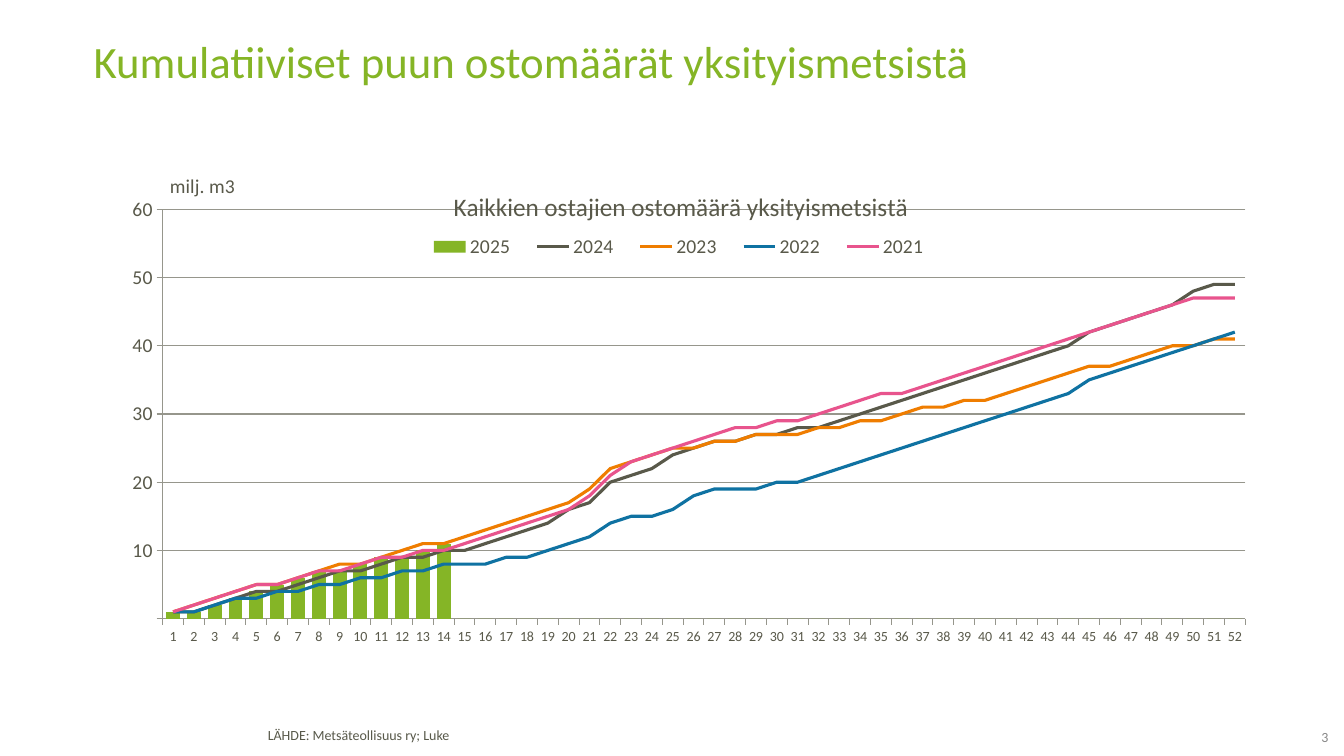
from lxml import etree
from pptx import Presentation
from pptx.chart.data import CategoryChartData
from pptx.dml.color import RGBColor
from pptx.enum.chart import (XL_CHART_TYPE, XL_LEGEND_POSITION,
                             XL_MARKER_STYLE, XL_TICK_MARK)
from pptx.enum.text import MSO_ANCHOR, PP_ALIGN
from pptx.oxml.ns import qn
from pptx.util import Cm, Pt

COLUMNS = XL_CHART_TYPE.COLUMN_CLUSTERED
LEGEND_RIGHT = XL_LEGEND_POSITION.RIGHT
NO_MARKER = XL_MARKER_STYLE.NONE
TICK_OUT = XL_TICK_MARK.OUTSIDE
TICK_NONE = XL_TICK_MARK.NONE
TOP, MIDDLE = MSO_ANCHOR.TOP, MSO_ANCHOR.MIDDLE
LEFT, RIGHT = PP_ALIGN.LEFT, PP_ALIGN.RIGHT

FONT = "Calibri"
MILLION = 1000000
WEEKS = 52
COLORS = {
    "green": "85B526", "text": "59594A", "source": "58594A",
    "number": "878787", "grid": "96968C",
    "2025": "85B526", "2024": "59594A", "2023": "EF7D00",
    "2022": "0F72A2", "2021": "E8548D",
}
PURCHASES = {
    "2025": [1, 1, 2, 3, 4, 5, 6, 7, 7, 8, 9, 9, 10, 11],
    "2024": [1, 1, 2, 3, 4, 4, 5, 6, 7, 7, 8, 9, 9, 10, 10, 11, 12, 13,
             14, 16, 17, 20, 21, 22, 24, 25, 26, 26, 27, 27, 28, 28, 29, 30, 31,
             32, 33, 34, 35, 36, 37, 38, 39, 40, 42, 43, 44, 45, 46, 48, 49, 49],
    "2023": [1, 2, 3, 4, 5, 5, 6, 7, 8, 8, 9, 10, 11, 11, 12, 13, 14, 15,
             16, 17, 19, 22, 23, 24, 25, 25, 26, 26, 27, 27, 27, 28, 28, 29, 29,
             30, 31, 31, 32, 32, 33, 34, 35, 36, 37, 37, 38, 39, 40, 40, 41, 41],
    "2022": [1, 1, 2, 3, 3, 4, 4, 5, 5, 6, 6, 7, 7, 8, 8, 8, 9, 9,
             10, 11, 12, 14, 15, 15, 16, 18, 19, 19, 19, 20, 20, 21, 22, 23, 24,
             25, 26, 27, 28, 29, 30, 31, 32, 33, 35, 36, 37, 38, 39, 40, 41, 42],
    "2021": [1, 2, 3, 4, 5, 5, 6, 7, 7, 8, 9, 9, 10, 10, 11, 12, 13, 14,
             15, 16, 18, 21, 23, 24, 25, 26, 27, 28, 28, 29, 29, 30, 31, 32, 33,
             33, 34, 35, 36, 37, 38, 39, 40, 41, 42, 43, 44, 45, 46, 47, 47, 47],
}


def rgb(name):
    """Return the named colour."""
    return RGBColor.from_string(COLORS[name])


def set_font(font, size, color):
    """Format a font."""
    font.name = FONT
    font.size = Pt(size)
    font.bold = False
    font.color.rgb = rgb(color)


def add_text(page, text, place, *, size, color, align=LEFT, anchor=TOP,
             spacing=1.0, insets=(0.25, 0.13, 0.25, 0.13)):
    """Add a text box with one formatted paragraph."""
    box = page.shapes.add_textbox(*(Cm(length) for length in place))
    frame = box.text_frame
    frame.word_wrap = True
    frame.vertical_anchor = anchor
    (frame.margin_left, frame.margin_top,
     frame.margin_right, frame.margin_bottom) = (Cm(inset) for inset in insets)
    para = frame.paragraphs[0]
    para.alignment = align
    para.line_spacing = spacing
    span = para.add_run()
    span.text = text
    set_font(span.font, size, color)


def add_child(parent, tag, value=None):
    """Append a chart element with an optional value."""
    child = etree.SubElement(parent, qn(tag))
    if value is not None:
        child.set("val", str(value))
    return child


def set_layout(element, index, x, y, width=None, height=None, inner=False):
    """Place a chart part at fractions of the chart area."""
    for previous in element.findall(qn("c:layout")):
        element.remove(previous)
    layout = etree.Element(qn("c:layout"))
    element.insert(index, layout)
    manual = add_child(layout, "c:manualLayout")
    if inner:
        add_child(manual, "c:layoutTarget", "inner")
    add_child(manual, "c:xMode", "edge")
    add_child(manual, "c:yMode", "edge")
    for tag, value in (("x", x), ("y", y), ("w", width), ("h", height)):
        if value is not None:
            add_child(manual, f"c:{tag}", value)


def set_title(title, text, size, x, y):
    """Write and place a horizontal title of the chart or an axis."""
    frame = title.text_frame
    frame.text = text
    set_font(frame.paragraphs[0].runs[0].font, size, "text")
    element = title._element
    body = element.find(".//" + qn("a:bodyPr"))
    body.set("rot", "0")
    body.set("vert", "horz")
    set_layout(element, 1, x, y)


def move_to_lines(chart):
    """Turn every series after the first into a line."""
    bars = chart._chartSpace.find(".//" + qn("c:barChart"))
    lines = etree.Element(qn("c:lineChart"))
    bars.addnext(lines)
    add_child(lines, "c:grouping", "standard")
    add_child(lines, "c:varyColors", 0)
    for series in bars.findall(qn("c:ser"))[1:]:
        for invert in series.findall(qn("c:invertIfNegative")):
            series.remove(invert)
        lines.append(series)
    add_child(lines, "c:marker", 1)
    for axis in bars.findall(qn("c:axId")):
        add_child(lines, "c:axId", axis.get("val"))


def format_series(chart):
    """Colour the columns and the lines."""
    columns, lines = chart.plots
    columns.gap_width = 50
    columns.vary_by_categories = False
    for series in columns.series:
        series.format.fill.solid()
        series.format.fill.fore_color.rgb = rgb(series.name)
    for series in lines.series:
        series.smooth = False
        series.marker.style = NO_MARKER
        series.format.line.width = Pt(2.25)
        series.format.line.color.rgb = rgb(series.name)


def format_axes(chart):
    """Format the week axis and the volume axis."""
    weeks, volume = chart.category_axis, chart.value_axis
    for axis, size in ((weeks, 10), (volume, 14)):
        axis.major_tick_mark = TICK_OUT
        axis.minor_tick_mark = TICK_NONE
        axis.format.line.color.rgb = rgb("grid")
        set_font(axis.tick_labels.font, size, "text")
    volume.minimum_scale = 0
    volume.maximum_scale = 60 * MILLION
    volume.major_unit = 10 * MILLION
    volume.tick_labels.number_format = "#,,"
    volume.tick_labels.number_format_is_linked = False
    volume.major_gridlines.format.line.color.rgb = rgb("grid")
    set_title(volume.axis_title, "milj. m3", 14, 0.07, 0.02)


def add_purchase_chart(page, place):
    """Add the weekly cumulative purchases as columns and lines."""
    data = CategoryChartData(number_format="#,,")
    data.categories = [str(week) for week in range(1, WEEKS + 1)]
    for year, volumes in PURCHASES.items():
        rest = [0] * (WEEKS - len(volumes))
        data.add_series(year, [volume * MILLION for volume in volumes + rest])
    frame = page.shapes.add_chart(COLUMNS, *(Cm(length) for length in place), data)
    chart = frame.chart
    set_font(chart.font, 10, "text")
    move_to_lines(chart)
    format_series(chart)
    format_axes(chart)
    set_title(chart.chart_title,
              "Kaikkien ostajien ostomäärä yksityismetsistä", 18, 0.31, 0.05)
    chart.has_legend = True
    chart.legend.position = LEGEND_RIGHT
    chart.legend.include_in_layout = False
    set_font(chart.legend.font, 14, "text")
    set_layout(chart.legend._element, 1, 0.28, 0.14, 0.45, 0.06)
    plot_area = chart._chartSpace.find(".//" + qn("c:plotArea"))
    set_layout(plot_area, 0, 0.067, 0.098, 0.919, 0.787, inner=True)


def main():
    """Build and save the slide."""
    deck = Presentation()
    deck.slide_width, deck.slide_height = Cm(33.87), Cm(19.05)
    page = deck.slides.add_slide(deck.slide_layouts[6])
    add_text(page, "LÄHDE: Metsäteollisuus ry; Luke", (6.5, 18.24, 18.24, 0.69),
             size=10, color="source", spacing=0.85)
    add_text(page, "3", (32.13, 18.39, 1.35, 0.48), size=10, color="number",
             align=RIGHT, anchor=MIDDLE, insets=(0, 0, 0, 0.1))
    add_text(page, "Kumulatiiviset puun ostomäärät yksityismetsistä",
             (2.11, 0.99, 29.69, 2.49), size=32, color="green", spacing=0.8)
    add_purchase_chart(page, (2.11, 3.99, 29.69, 13.11))
    deck.save("out.pptx")


if __name__ == "__main__":
    main()
